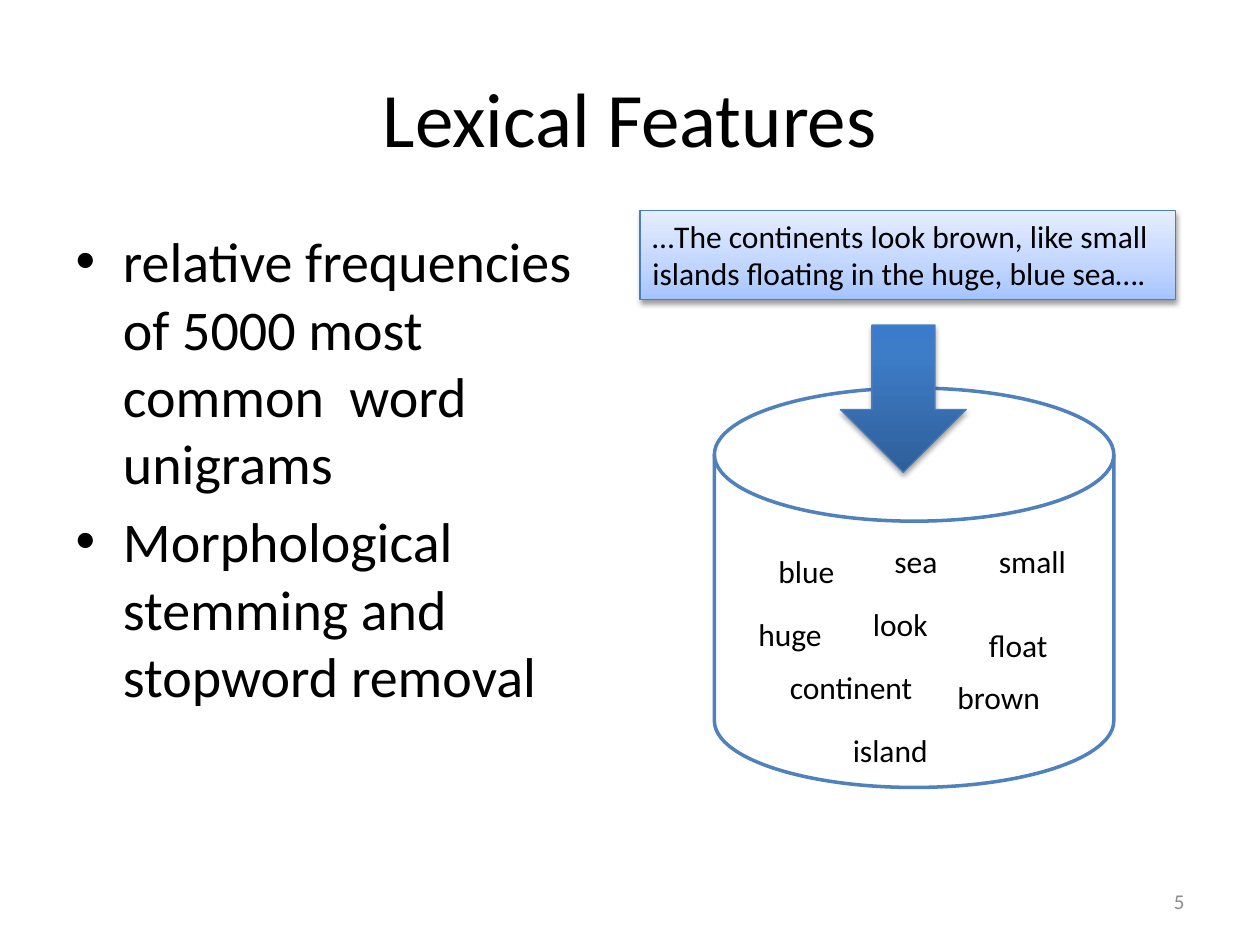
from dataclasses import dataclass

import lxml.etree
import pptx
import pptx.dml.color
import pptx.enum.shapes
import pptx.enum.text
import pptx.oxml.ns
import pptx.shapes.autoshape
import pptx.slide
import pptx.util
from pptx.util import Inches

Shape = pptx.shapes.autoshape.Shape
Slide = pptx.slide.Slide
Align = pptx.enum.text.PP_ALIGN
AutoSize = pptx.enum.text.MSO_AUTO_SIZE
Preset = pptx.enum.shapes.MSO_SHAPE
qn = pptx.oxml.ns.qn


@dataclass(frozen=True)
class Theme:
    font: str = "Calibri"
    title_size: int = 44
    body_size: int = 32
    label_size: int = 18
    number_size: int = 12
    ink: str = "000000"
    muted: str = "8C8C8C"
    paper: str = "FFFFFF"
    edge: str = "4B7EBC"
    disk_edge: str = "4F81BD"
    quote_stops: tuple = ((0, "A4C4FF"), (35, "BFD4FF"), (100, "E6EEFF"))
    arrow_stops: tuple = ((0, "2F5F99"), (80, "3D7CC7"), (100, "3A7CCB"))


@dataclass(frozen=True)
class Box:
    left: float
    top: float
    width: float
    height: float

    def lengths(self) -> tuple:
        return tuple(map(Inches, (self.left, self.top, self.width, self.height)))


@dataclass(frozen=True)
class Word:
    text: str
    left: float
    top: float
    width: float


THEME = Theme()
WORD_HEIGHT = 0.4
WORDS = (
    Word("island", 6.67, 5.75, 0.8),
    Word("huge", 5.92, 4.83, 0.71),
    Word("float", 7.75, 4.92, 0.67),
    Word("small", 7.83, 4.25, 0.74),
    Word("blue", 6.08, 4.33, 0.65),
    Word("continent", 6.17, 5.25, 1.19),
    Word("brown", 7.5, 5.33, 0.86),
    Word("look", 6.83, 4.75, 0.64),
    Word("sea", 7, 4.25, 0.55),
)
POINTS = (
    "relative frequencies of 5000 most common  word unigrams",
    "Morphological stemming and stopword removal",
)


def rgb(color: str) -> pptx.dml.color.RGBColor:
    return pptx.dml.color.RGBColor.from_string(color)


def write(shape: Shape, lines: tuple, size: int, align: Align,
          color: str = THEME.ink) -> None:
    frame = shape.text_frame
    frame.text = "\n".join(lines)
    for para in frame.paragraphs:
        para.alignment = align
        para.font.name = THEME.font
        para.font.size = pptx.util.Pt(size)
        para.font.color.rgb = rgb(color)


def fill_placeholder(shape: Shape, box: Box, lines: tuple, size: int,
                     align: Align) -> None:
    shape.left, shape.top, shape.width, shape.height = box.lengths()
    write(shape, lines, size, align)
    shape.text_frame.auto_size = AutoSize.NONE


def add_text(slide: Slide, box: Box, text: str, size: int) -> Shape:
    shape = slide.shapes.add_textbox(*box.lengths())
    write(shape, (text,), size, Align.LEFT)
    return shape


def add_outlined(slide: Slide, preset: Preset, box: Box, color: str,
                 width: float) -> Shape:
    shape = slide.shapes.add_shape(preset, *box.lengths())
    shape.shadow.inherit = False
    shape.line.color.rgb = rgb(color)
    shape.line.width = pptx.util.Pt(width)
    return shape


def add_color(parent: lxml.etree._Element, color: str) -> lxml.etree._Element:
    return lxml.etree.SubElement(parent, qn("a:srgbClr"), val=color)


def add_raised(slide: Slide, preset: Preset, box: Box, stops: tuple,
               shadow_alpha: int, shadow_distance: float) -> Shape:
    """Add a shape with an upward gradient and a soft shadow below."""
    shape = add_outlined(slide, preset, box, THEME.edge, 0.75)
    shape.fill.gradient()
    shape.fill.gradient_angle = 90
    properties = shape._element.spPr
    stop_list = properties.find(".//" + qn("a:gsLst"))
    for old_stop in list(stop_list):
        stop_list.remove(old_stop)
    for position, color in stops:
        stop = lxml.etree.SubElement(stop_list, qn("a:gs"), pos=str(position * 1000))
        add_color(stop, color)
    shadow = lxml.etree.SubElement(
        properties.find(qn("a:effectLst")), qn("a:outerShdw"),
        blurRad=str(pptx.util.Pt(3.1)), dist=str(pptx.util.Pt(shadow_distance)),
        dir="5400000", rotWithShape="0")
    lxml.etree.SubElement(add_color(shadow, THEME.ink), qn("a:alpha"),
                          val=str(shadow_alpha * 1000))
    return shape


def main() -> None:
    deck = pptx.Presentation()
    deck.slide_width, deck.slide_height = Inches(10), Inches(7.5)
    page = deck.slides.add_slide(deck.slide_layouts[1])

    # Title and bullet list
    fill_placeholder(page.shapes.title, Box(0.5, 0.3, 9, 1.25),
                     ("Lexical Features",), THEME.title_size, Align.CENTER)
    fill_placeholder(page.placeholders[1], Box(0.5, 1.75, 4.25, 4.92),
                     POINTS, THEME.body_size, Align.LEFT)

    # Slide number
    number = page.shapes.add_textbox(*Box(7.17, 6.95, 2.33, 0.4).lengths())
    write(number, ("5",), THEME.number_size, Align.RIGHT, THEME.muted)
    number.text_frame.word_wrap = True
    number.text_frame.vertical_anchor = pptx.enum.text.MSO_ANCHOR.MIDDLE

    # Sample sentence
    quote = add_raised(page, Preset.RECTANGLE, Box(5.08, 1.67, 4.25, 0.71),
                       THEME.quote_stops, 38, 1.6)
    write(quote, ("…The continents look brown, like small islands floating "
                  "in the huge, blue sea….",), THEME.label_size, Align.LEFT)
    quote.text_frame.vertical_anchor = pptx.enum.text.MSO_ANCHOR.TOP

    # Bag of words
    disk = add_outlined(page, Preset.FLOWCHART_MAGNETIC_DISK,
                        Box(5.67, 3.08, 3.17, 3.17), THEME.disk_edge, 2)
    disk.fill.solid()
    disk.fill.fore_color.rgb = rgb(THEME.paper)
    for word in WORDS:
        label = add_text(page, Box(word.left, word.top, word.width, WORD_HEIGHT),
                         word.text, THEME.label_size)
        label.text_frame.word_wrap = False
        label.text_frame.auto_size = AutoSize.SHAPE_TO_FIT_TEXT

    # Arrow from the sentence into the bag
    add_raised(page, Preset.DOWN_ARROW, Box(6.67, 2.58, 1, 1.17),
               THEME.arrow_stops, 35, 1.8)

    deck.save("out.pptx")


if __name__ == "__main__":
    main()
